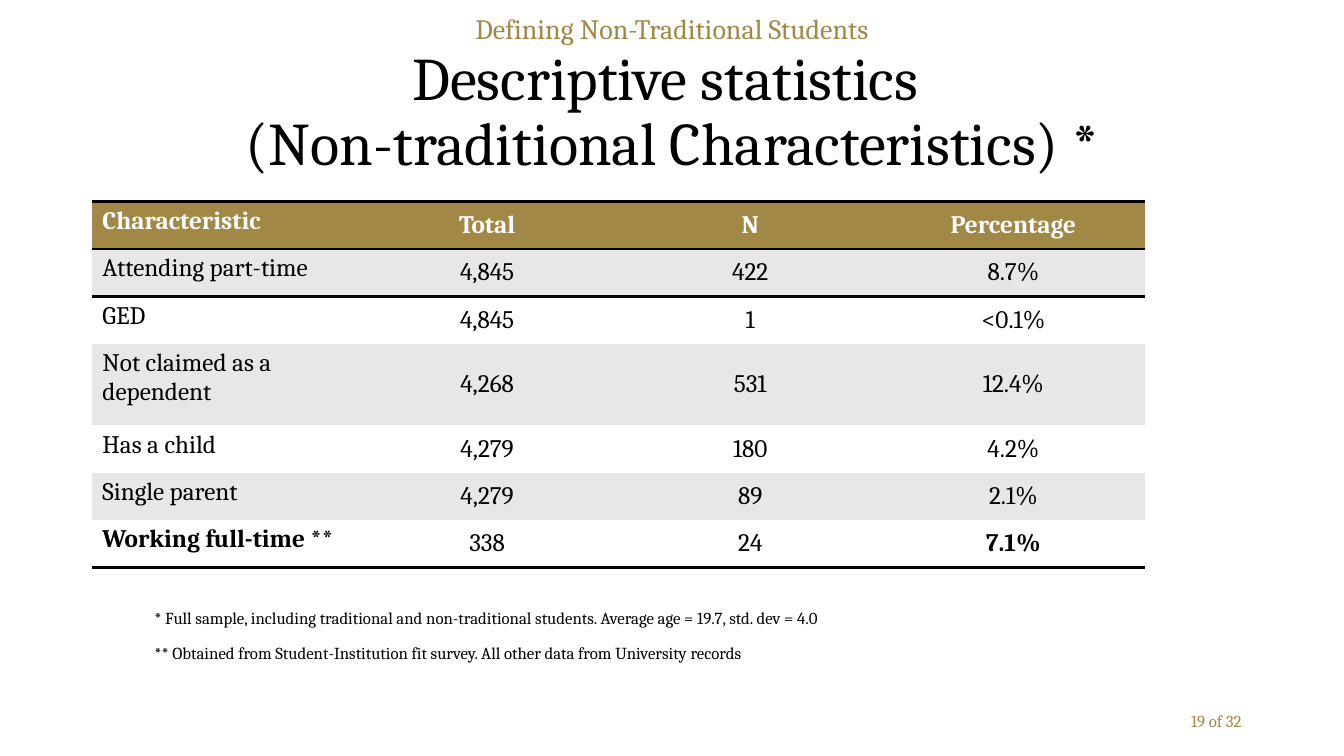
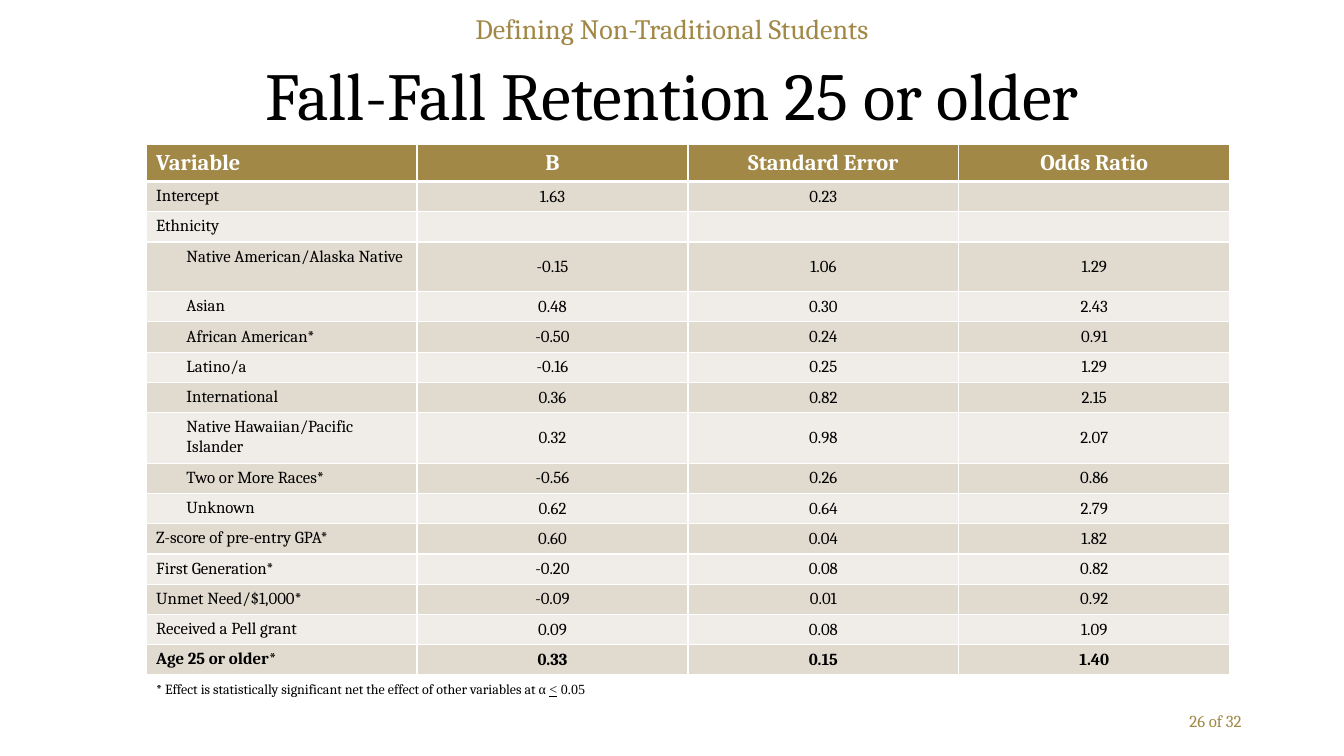
"""Builds two table slides on non-traditional students."""
from dataclasses import dataclass

from lxml import etree
from pptx import Presentation
from pptx.dml.color import RGBColor
from pptx.enum.text import MSO_ANCHOR, PP_ALIGN
from pptx.oxml.ns import qn
from pptx.util import Emu, Pt

TOP, MID, LOW = MSO_ANCHOR.TOP, MSO_ANCHOR.MIDDLE, MSO_ANCHOR.BOTTOM
LEFT, MIDST, RIGHT = PP_ALIGN.LEFT, PP_ALIGN.CENTER, PP_ALIGN.RIGHT
COLS, ROWS, UNIT = 160, 90, 76200
PLAIN = "{2D5ABB26-0587-4C30-8999-92F81FD0307C}"


@dataclass(frozen=True)
class Theme:
    font: str = "Cambria"
    greek: str = "Times New Roman"
    gold: str = "A18846"
    ink: str = "000000"
    white: str = "FFFFFF"
    gray: str = "E7E7E7"
    sand: str = "E0DACF"
    pale: str = "F0EDE9"
    topic: float = 20
    page: float = 12


THEME = Theme()


@dataclass(frozen=True)
class Box:
    left: float
    top: float
    width: float
    height: float


@dataclass(frozen=True)
class Style:
    size: float
    color: str = THEME.ink
    bold: bool = False
    align: PP_ALIGN = LEFT
    space: float = 1.0


@dataclass(frozen=True)
class Run:
    text: str
    font: str = THEME.font
    under: bool = False


@dataclass(frozen=True)
class Row:
    label: str
    vals: tuple[str, ...] = ("", "", "")
    tall: bool = False
    deep: bool = False
    bold: tuple[int, ...] = ()


@dataclass(frozen=True)
class Grid:
    left: float
    top: float
    col: float
    head: float
    row: float
    tall: float
    sizes: tuple[float, float]
    bands: tuple[str, str]
    edge: str
    thin: float
    rules: dict[int, float]
    anchor: MSO_ANCHOR
    rows: tuple[Row, ...]


@dataclass(frozen=True)
class Note:
    box: Box
    size: float
    runs: tuple[Run, ...]


@dataclass(frozen=True)
class Page:
    title: str
    top: float
    size: float
    number: str
    grid: Grid
    notes: tuple[Note, ...]


STATS = Grid(
    11, 24, 31.33, 5.64, 5.64, 9.72, (18, 18), (THEME.gray, THEME.white),
    THEME.ink, 0, {0: 2, 1: 2, 7: 2}, TOP,
    (
        Row("Characteristic", ("Total", "N", "Percentage"), bold=(0, 1, 2, 3)),
        Row("Attending part-time", ("4,845", "422", "8.7%")),
        Row("GED", ("4,845", "1", "<0.1%")),
        Row("Not claimed as a dependent", ("4,268", "531", "12.4%"), tall=True),
        Row("Has a child", ("4,279", "180", "4.2%")),
        Row("Single parent", ("4,279", "89", "2.1%")),
        Row("Working full-time **", ("338", "24", "7.1%"), bold=(0, 3)),
    ),
)

MODEL = Grid(
    17.4, 17.2, 32.25, 4.32, 3.54, 5.9, (16, 12), (THEME.sand, THEME.pale),
    THEME.white, 1, {1: 3}, LOW,
    (
        Row("Variable", ("B", "Standard Error", "Odds Ratio"), bold=(0, 1, 2, 3)),
        Row("Intercept", ("1.63", "0.23", "")),
        Row("Ethnicity"),
        Row("Native American/Alaska Native", ("-0.15", "1.06", "1.29"), tall=True, deep=True),
        Row("Asian", ("0.48", "0.30", "2.43"), deep=True),
        Row("African American*", ("-0.50", "0.24", "0.91"), deep=True),
        Row("Latino/a", ("-0.16", "0.25", "1.29"), deep=True),
        Row("International", ("0.36", "0.82", "2.15"), deep=True),
        Row("Native Hawaiian/Pacific Islander", ("0.32", "0.98", "2.07"), tall=True, deep=True),
        Row("Two or More Races*", ("-0.56", "0.26", "0.86"), deep=True),
        Row("Unknown", ("0.62", "0.64", "2.79"), deep=True),
        Row("Z-score of pre-entry GPA*", ("0.60", "0.04", "1.82")),
        Row("First Generation*", ("-0.20", "0.08", "0.82")),
        Row("Unmet Need/$1,000*", ("-0.09", "0.01", "0.92")),
        Row("Received a Pell grant", ("0.09", "0.08", "1.09")),
        Row("Age 25 or older*", ("0.33", "0.15", "1.40"), bold=(0, 1, 2, 3)),
    ),
)

PAGES = (
    Page(
        "Descriptive statistics \v(Non-traditional Characteristics) *",
        4.8, 43.2, "19 of 32", STATS,
        (
            Note(Box(17.2, 71.8, 95.8, 3.6), 12, (Run(
                "* Full sample, including traditional and non-traditional students. "
                "Average age = 19.7, std. dev = 4.0"),)),
            Note(Box(17.2, 75.9, 95.8, 3.6), 12, (Run(
                "** Obtained from Student-Institution fit survey. "
                "All other data from University records"),)),
        ),
    ),
    Page(
        "Fall-Fall Retention 25 or older", 3, 48, "26 of 32", MODEL,
        (
            Note(Box(17.4, 80.4, 95, 3.2), 10, (
                Run("* Effect is statistically significant net the effect of other variables at "),
                Run("α ", THEME.greek),
                Run("<", THEME.greek, True),
                Run(" 0.05", THEME.greek),
            )),
        ),
    ),
)


def span(units: float) -> Emu:
    """Turn grid units into a length."""
    return Emu(round(units * UNIT))


def dress(para, style: Style) -> None:
    """Set the look of a paragraph."""
    para.alignment = style.align
    if style.space != 1:
        para.line_spacing = style.space
    font = para.font
    font.name, font.size, font.bold = THEME.font, Pt(style.size), style.bold
    font.color.rgb = RGBColor.from_string(style.color)


def write(slide, box: Box, runs: tuple[Run, ...], style: Style, anchor: MSO_ANCHOR = TOP) -> None:
    """Place one paragraph of text."""
    shape = slide.shapes.add_textbox(*map(span, (box.left, box.top, box.width, box.height)))
    frame = shape.text_frame
    frame.word_wrap = True
    frame.vertical_anchor = anchor
    para = frame.paragraphs[0]
    if len(runs) == 1:
        para.text = runs[0].text
    else:
        for item in runs:
            run = para.add_run()
            run.text = item.text
            run.font.name = item.font
            if item.under:
                run.font.underline = True
    dress(para, style)


def border(cell, color: str, widths: tuple[float, ...]) -> None:
    """Draw the left, right, top and bottom edges of a cell."""
    props = cell._tc.get_or_add_tcPr()
    spot = 0
    for side, width in zip("LRTB", widths):
        if width:
            line = etree.Element(qn(f"a:ln{side}"), w=str(Pt(width)))
            fill = etree.SubElement(line, qn("a:solidFill"))
            etree.SubElement(fill, qn("a:srgbClr"), val=color)
            props.insert(spot, line)
            spot += 1


def fill_cell(cell, text: str, style: Style, anchor: MSO_ANCHOR, back: str, deep: bool) -> None:
    """Put styled text on a plain fill."""
    cell.fill.solid()
    cell.fill.fore_color.rgb = RGBColor.from_string(back)
    cell.vertical_anchor = anchor
    para = cell.text_frame.paragraphs[0]
    para.text = text
    if deep:
        para._p.get_or_add_pPr().set("marL", str(span(3.6)))
    dress(para, style)
    if not text:
        para._p.get_or_add_endParaRPr().set("sz", str(round(style.size * 100)))


def draw_grid(slide, grid: Grid) -> None:
    """Draw a table with a gold head and banded rows."""
    tall = [grid.tall if row.tall else grid.row for row in grid.rows]
    tall[0] = grid.head
    count = len(grid.rows[0].vals) + 1
    table = slide.shapes.add_table(
        len(tall), count, span(grid.left), span(grid.top),
        span(grid.col * count), span(sum(tall))).table
    table._tbl.tblPr.find(qn("a:tableStyleId")).text = PLAIN
    table.first_row = table.horz_banding = False
    for col in table.columns:
        col.width = span(grid.col)
    for i, row in enumerate(grid.rows):
        table.rows[i].height = span(tall[i])
        head = i == 0
        size = grid.sizes[0 if head else 1]
        color = THEME.white if head else THEME.ink
        back = THEME.gold if head else grid.bands[(i - 1) % 2]
        over, under = (grid.rules.get(k, grid.thin) for k in (i, i + 1))
        for j, text in enumerate((row.label, *row.vals)):
            cell = table.cell(i, j)
            first = j == 0
            style = Style(size, color, j in row.bold, LEFT if first else MIDST)
            anchor = (grid.anchor if head else TOP) if first else MID
            fill_cell(cell, text, style, anchor, back, first and row.deep)
            border(cell, grid.edge, (grid.thin, grid.thin, over, under))


def draw_page(deck, page: Page) -> None:
    """Build one slide."""
    slide = deck.slides.add_slide(deck.slide_layouts[6])
    write(slide, Box(11, page.top, 138, 17.4), (Run(page.title),),
          Style(page.size, align=MIDST, space=0.9), MID)
    write(slide, Box(0, 1.5, COLS, 4.8), (Run("Defining Non-Traditional Students"),),
          Style(THEME.topic, THEME.gold, align=MIDST, space=0.8))
    draw_grid(slide, page.grid)
    for note in page.notes:
        write(slide, note.box, note.runs, Style(note.size))
    write(slide, Box(113, 83.4, 36, 4.8), (Run(page.number),),
          Style(THEME.page, THEME.gold, align=RIGHT), MID)


def main() -> None:
    """Build and save the deck."""
    deck = Presentation()
    deck.slide_width, deck.slide_height = span(COLS), span(ROWS)
    for page in PAGES:
        draw_page(deck, page)
    deck.save("out.pptx")


if __name__ == "__main__":
    main()
